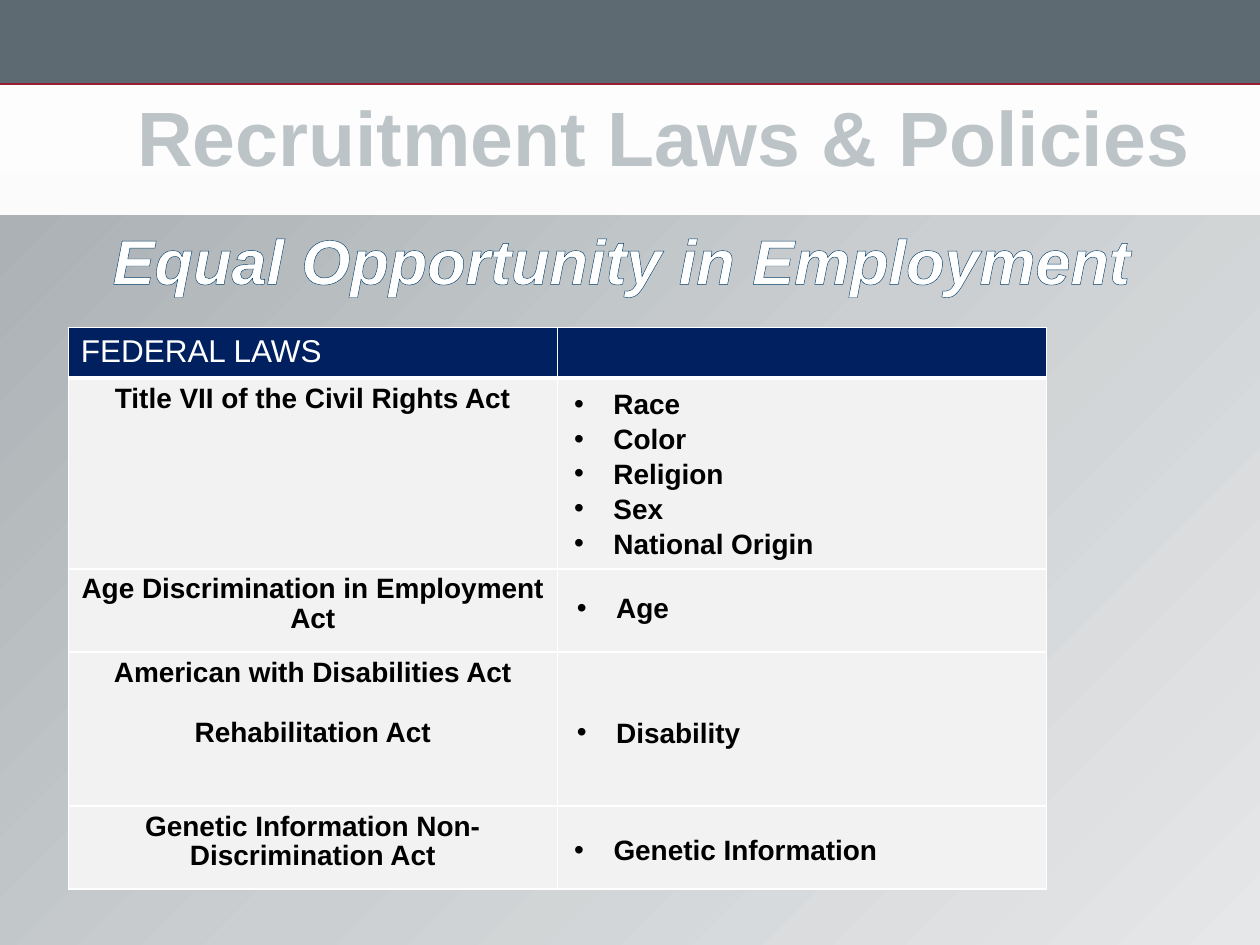
from pptx import Presentation
from pptx.dml.color import RGBColor
from pptx.enum.shapes import MSO_CONNECTOR, MSO_SHAPE
from pptx.enum.text import MSO_ANCHOR, MSO_AUTO_SIZE, PP_ALIGN
from pptx.oxml.ns import qn
from pptx.util import Pt
from lxml.etree import SubElement
from copy import deepcopy

COLORS = {
    "band": "5E6A71", "rule": "981E32", "title": "BDC4C8", "navy": "002060",
    "outline": "003C69", "white": "FFFFFF", "black": "000000", "cell": "F2F2F2",
}
BACKDROP = ["EAEAEA", "FFFFFF"]
PANEL = ["ABB1B5", "CBCFD1", "E6E7E8"]
INDENT = 22.5

LAWS = [
    ["Title VII of the Civil Rights Act"],
    ["Age Discrimination in Employment Act"],
    ["American with Disabilities Act", "Rehabilitation Act"],
    ["Genetic Information Non-Discrimination Act"],
]
ROW_HEIGHTS = [27.7, 109, 47.5, 88, 47.5]
# Left, top, width, height and items of each list of protected groups
GROUPS = [
    (321, 216.7, 158, 126, ["Race", "Color", "Religion", "Sex", "National Origin"]),
    (322.5, 333.4, 68, 26.6, ["Age"]),
    (322.5, 404.6, 110, 26.6, ["Disability"]),
    (321, 471.6, 190, 26.6, ["Genetic Information"]),
]


def rgb(name):
    return RGBColor.from_string(COLORS[name])


def add_line(parent, tag, color, width):
    line = SubElement(parent, qn(tag), w=str(Pt(width)))
    fill = SubElement(line, qn("a:solidFill"))
    SubElement(fill, qn("a:srgbClr"), val=COLORS[color])
    return line


class SlideBuilder:
    font = "Arial"

    def __init__(self, page):
        self.page = page

    def gradient(self, fill, element, colors, angle):
        fill.gradient()
        fill.gradient_angle = angle
        stops = next(element.iter(qn("a:gsLst")))
        while len(stops) < len(colors):
            stops.append(deepcopy(stops[0]))
        for index, (stop, color) in enumerate(zip(fill.gradient_stops, colors)):
            stop.color.rgb = RGBColor.from_string(color)
            stop.position = index / (len(colors) - 1)

    def rectangle(self, left, top, width, height):
        shape = self.page.shapes.add_shape(
            MSO_SHAPE.RECTANGLE, Pt(left), Pt(top), Pt(width), Pt(height))
        shape.shadow.inherit = False
        shape.line.fill.background()
        return shape

    def rule(self, left, right, top, color):
        line = self.page.shapes.add_connector(
            MSO_CONNECTOR.STRAIGHT, Pt(left), Pt(top), Pt(right), Pt(top))
        line.line.color.rgb = rgb(color)
        line.line.width = Pt(1)
        SubElement(line.element.spPr, qn("a:effectLst"))

    def span(self, para, text, size, color, bold=True, italic=False, outline=None):
        span = para.add_run()
        span.text = text
        font = span.font
        font.name, font.size, font.bold, font.italic = self.font, Pt(size), bold, italic
        font.color.rgb = rgb(color)
        if outline:
            properties = span.font._element
            properties.insert(0, add_line(properties, "a:ln", *outline))

    def title(self, text, left, top, width, height):
        box = self.page.shapes.title
        box.left, box.top, box.width, box.height = Pt(left), Pt(top), Pt(width), Pt(height)
        frame = box.text_frame
        frame.margin_left = frame.margin_right = Pt(36)
        frame.vertical_anchor = MSO_ANCHOR.BOTTOM
        frame.auto_size = MSO_AUTO_SIZE.NONE
        para = frame.paragraphs[0]
        para.alignment = PP_ALIGN.CENTER
        self.span(para, text, 44, "title", outline=("navy", 1.75))

    def text_box(self, left, top, width, height, wrap):
        box = self.page.shapes.add_textbox(Pt(left), Pt(top), Pt(width), Pt(height))
        box.text_frame.word_wrap = wrap
        return box.text_frame

    def bullets(self, left, top, width, height, items):
        frame = self.text_box(left, top, width, height, False)
        for index, item in enumerate(items):
            para = frame.add_paragraph() if index else frame.paragraphs[0]
            properties = para._p.get_or_add_pPr()
            properties.set("marL", str(Pt(INDENT)))
            properties.set("indent", str(Pt(-INDENT)))
            SubElement(properties, qn("a:buFont"), typeface=self.font)
            SubElement(properties, qn("a:buChar"), char="•")
            para.line_spacing = 1.04
            self.span(para, item, 16, "black")

    def cell(self, cell, fill, top=1, bottom=1):
        properties = cell._tc.get_or_add_tcPr()
        for side, width in (("L", 1), ("R", 1), ("T", top), ("B", bottom)):
            add_line(properties, f"a:ln{side}", "white", width)
        cell.fill.solid()
        cell.fill.fore_color.rgb = rgb(fill)

    def law_table(self, left, top, column_width):
        table = self.page.shapes.add_table(
            len(ROW_HEIGHTS), 2, Pt(left), Pt(top),
            Pt(2 * column_width), Pt(sum(ROW_HEIGHTS))).table
        for column in table.columns:
            column.width = Pt(column_width)
        for index, height in enumerate(ROW_HEIGHTS):
            table.rows[index].height = Pt(height)
            for cell in table.rows[index].cells:
                self.cell(cell, "cell" if index else "navy",
                          top=3 if index == 1 else 1, bottom=1 if index else 3)
        heading = table.cell(0, 0).text_frame.paragraphs[0]
        self.span(heading, "FEDERAL LAWS", 18, "white", bold=False)
        for row, names in enumerate(LAWS, start=1):
            frame = table.cell(row, 0).text_frame
            for index, name in enumerate(names):
                para = frame.add_paragraph() if index else frame.paragraphs[0]
                para.alignment = PP_ALIGN.CENTER
                para.line_spacing = 0.96
                if index:
                    para.space_before = Pt(17.7)
                self.span(para, name, 16, "black")


def main():
    deck = Presentation()
    deck.slide_width, deck.slide_height = Pt(720), Pt(540)
    page = deck.slides.add_slide(deck.slide_layouts[5])
    builder = SlideBuilder(page)

    # Background, top band and lower panel
    builder.gradient(page.background.fill, page.element, BACKDROP, 90)
    band = builder.rectangle(0, 0, 720, 48)
    band.fill.solid()
    band.fill.fore_color.rgb = rgb("band")
    builder.rule(-1.5, 720, 48, "rule")
    panel = builder.rectangle(0, 123, 720, 417)
    builder.gradient(panel.fill, panel.element, PANEL, 315)

    # Title and subtitle
    builder.title("Recruitment Laws & Policies", 39, 46.8, 681, 60.5)
    subtitle = builder.text_box(-152.6, 123, 1016, 51, True).paragraphs[0]
    subtitle.alignment = PP_ALIGN.CENTER
    builder.span(subtitle, "Equal Opportunity in Employment", 36, "white",
                 italic=True, outline=("outline", 0.75))

    # Laws and the groups they protect
    builder.law_table(39, 187.2, 279.5)
    for group in GROUPS:
        builder.bullets(*group)

    deck.save("out.pptx")


if __name__ == "__main__":
    main()
